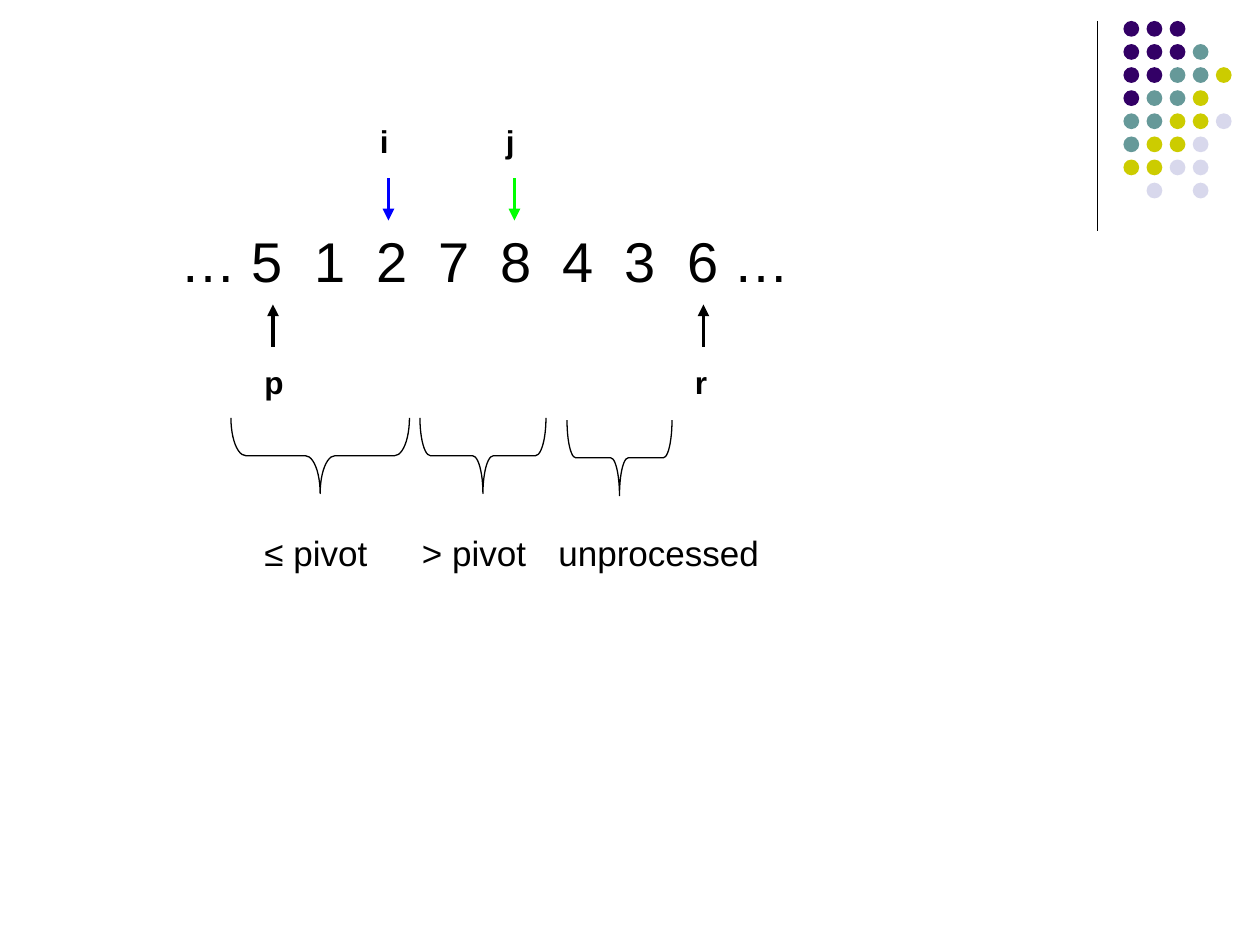
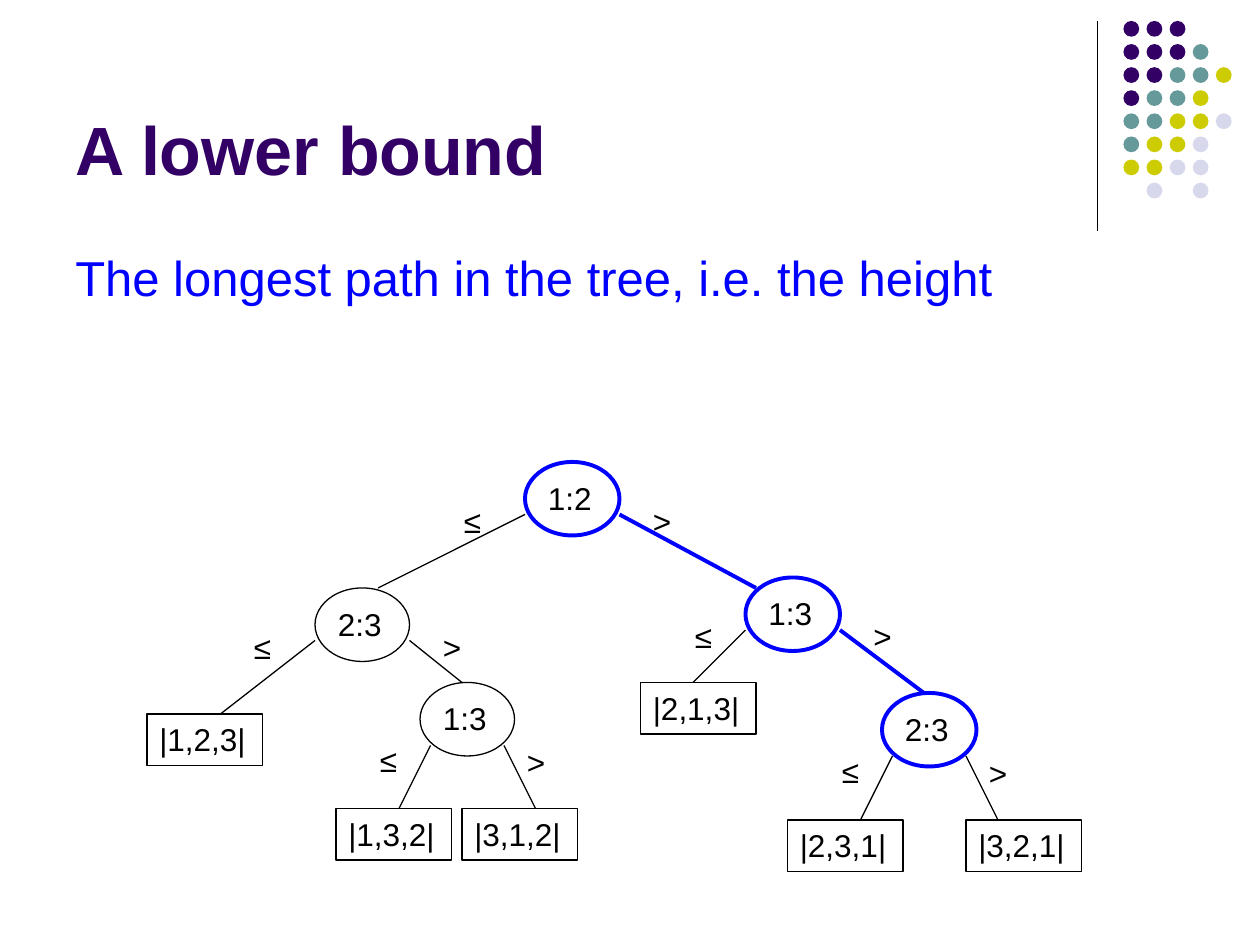
import pptx
import pptx.dml.color
import pptx.enum.shapes
import pptx.enum.text
import pptx.oxml
import pptx.oxml.ns
import pptx.util

RGBColor = pptx.dml.color.RGBColor
SHAPE = pptx.enum.shapes.MSO_SHAPE
ANCHOR = pptx.enum.text.MSO_ANCHOR

BLACK = RGBColor(0x00, 0x00, 0x00)
BLUE = RGBColor(0x00, 0x00, 0xFF)
GREEN = RGBColor(0x00, 0xFF, 0x00)
PURPLE = RGBColor(0x33, 0x00, 0x66)
TEAL = RGBColor(0x66, 0x99, 0x99)
YELLOW = RGBColor(0xCC, 0xCC, 0x00)
LAVENDER = RGBColor(0xD8, 0xD8, 0xEC)

FONT = "Arial"
THIN, THICK = 0.75, 2.25
PX = 914400 // 120
DOT_ROWS = ("PPP", "PPPT", "PPTTY", "PTTY", "TTYYL", "TYYL", "YYLL", " L L")
DOT_COLORS = {"P": PURPLE, "T": TEAL, "Y": YELLOW, "L": LAVENDER}


def px(*lengths):
    return [pptx.util.Emu(length * PX) for length in lengths]


def drawing_element(tag, attributes=""):
    return pptx.oxml.parse_xml(f'<a:{tag} {pptx.oxml.ns.nsdecls("a")} {attributes}/>')


class Deck:
    """Holds the shared style and the slide being drawn."""

    def __init__(self):
        self.presentation = pptx.Presentation()
        self.presentation.slide_width, self.presentation.slide_height = px(1200, 900)
        self.slide = None

    def new_slide(self):
        layout = self.presentation.slide_layouts[6]
        self.slide = self.presentation.slides.add_slide(layout)
        self.line((1045, 20), (1045, 220))
        self.dots(1070, 20)

    def dots(self, left, top, pitch=22, diameter=15):
        group = self.slide.shapes.add_group_shape()
        for row, codes in enumerate(DOT_ROWS):
            for column, code in enumerate(codes):
                if code in DOT_COLORS:
                    box = (left + column * pitch, top + row * pitch, diameter, diameter)
                    dot = group.shapes.add_shape(SHAPE.OVAL, *px(*box))
                    dot.shadow.inherit = False
                    dot.fill.solid()
                    dot.fill.fore_color.rgb = DOT_COLORS[code]
                    dot.line.fill.background()

    def line(self, start, end, color=BLACK, width=THIN, arrow=False):
        connector = self.slide.shapes.add_connector(
            pptx.enum.shapes.MSO_CONNECTOR.STRAIGHT, *px(*start, *end))
        connector.line.color.rgb = color
        connector.line.width = pptx.util.Pt(width)
        properties = connector._element.spPr
        if arrow:
            properties.get_or_add_ln().append(drawing_element("tailEnd", 'type="triangle"'))
        properties.append(drawing_element("effectLst"))

    def set_text(self, shape, text, size, color=BLACK, bold=False, anchor=ANCHOR.TOP):
        frame = shape.text_frame
        frame.word_wrap = True
        frame.vertical_anchor = anchor
        paragraph = frame.paragraphs[0]
        paragraph.text = text
        paragraph.alignment = pptx.enum.text.PP_ALIGN.LEFT
        paragraph.font.name = FONT
        paragraph.font.size = pptx.util.Pt(size)
        paragraph.font.bold = bold
        paragraph.font.color.rgb = color

    def text(self, text, box, size=18, **style):
        self.set_text(self.slide.shapes.add_textbox(*px(*box)), text, size, **style)

    def title(self, text):
        self.text(text, (60, 16, 990, 170), 39, color=PURPLE, bold=True,
                  anchor=ANCHOR.BOTTOM)

    def outline(self, kind, box, color=BLACK, width=THIN):
        shape = self.slide.shapes.add_shape(kind, *px(*box))
        shape.shadow.inherit = False
        shape.fill.background()
        shape.line.color.rgb = color
        shape.line.width = pptx.util.Pt(width)
        return shape

    def pointer(self, name, x, start, end, label_top, color=BLACK):
        self.line((x, start), (x, end), color, THICK, arrow=True)
        self.text(name, (x - 20, label_top, 50, 48), bold=True)

    def brace_below(self, left, top, width, depth=72):
        """Brace spanning width and pointing down, made by turning a left brace."""
        shift = (width - depth) // 2
        brace = self.outline(SHAPE.LEFT_BRACE, (left + shift, top - shift, depth, width))
        brace.rotation = 270
        brace.adjustments[0] = width / depth / 12
        brace.adjustments[1] = 0.5

    def node(self, text, left, top, color, width):
        self.outline(SHAPE.OVAL, (left, top, 90, 70), color, width)
        self.text(text, (left + 10, top + 10, 80, 48))

    def branch(self, sign, start, end, sign_at, color, width):
        self.line(start, end, color, width)
        self.text(sign, (*sign_at, 50, 48))

    def leaf(self, text, left, top):
        self.set_text(self.outline(SHAPE.RECTANGLE, (left, top, 110, 49)), text, 18)


def partition_slide(deck):
    deck.new_slide()
    deck.text("… 5  1  2  7  8  4  3  6 …", (160, 210, 620, 75), 32)
    for name, x, color in (("i", 370, BLUE), ("j", 490, GREEN)):
        deck.pointer(name, x, 170, 210, 110, color)
    for name, x in (("p", 260), ("r", 670)):
        deck.pointer(name, x, 330, 290, 340)
    for left, top, width in ((220, 398, 170), (400, 398, 120), (540, 400, 100)):
        deck.brace_below(left, top, width)
    for text, left, width in (("≤ pivot", 240, 140), ("> pivot", 390, 140),
                              ("unprocessed", 520, 240)):
        deck.text(text, (left, 500, width, 52), 20)


def decision_tree_slide(deck):
    plain, longest = (BLACK, THIN), (BLUE, THICK)
    nodes = (
        ("1:2", 500, 440, longest),
        ("2:3", 300, 560, plain),
        ("1:3", 710, 550, longest),
        ("1:3", 400, 650, plain),
        ("2:3", 840, 660, longest),
    )
    branches = (
        ("≤", (500, 490), (360, 560), (430, 472), plain),
        (">", (590, 490), (720, 560), (610, 472), longest),
        ("≤", (300, 610), (210, 680), (230, 592), plain),
        (">", (390, 610), (440, 650), (410, 592), plain),
        ("≤", (710, 600), (660, 650), (650, 582), plain),
        (">", (800, 600), (880, 660), (820, 582), longest),
        ("≤", (410, 710), (380, 770), (350, 700), plain),
        (">", (480, 710), (510, 770), (490, 702), plain),
        ("≤", (850, 720), (820, 780), (790, 710), plain),
        (">", (920, 720), (950, 780), (930, 712), plain),
    )
    leaves = (
        ("|1,2,3|", 140, 680),
        ("|1,3,2|", 320, 770),
        ("|3,1,2|", 440, 770),
        ("|2,3,1|", 750, 781),
        ("|3,2,1|", 920, 781),
        ("|2,1,3|", 610, 650),
    )
    deck.new_slide()
    deck.title("A lower bound")
    deck.text("The longest path in the tree, i.e. the height",
              (60, 230, 1080, 575), 28, color=BLUE)
    for text, left, top, style in nodes:
        deck.node(text, left, top, *style)
    for sign, start, end, sign_at, style in branches:
        deck.branch(sign, start, end, sign_at, *style)
    for leaf in leaves:
        deck.leaf(*leaf)


def main():
    deck = Deck()
    partition_slide(deck)
    decision_tree_slide(deck)
    deck.presentation.save("out.pptx")


if __name__ == "__main__":
    main()
